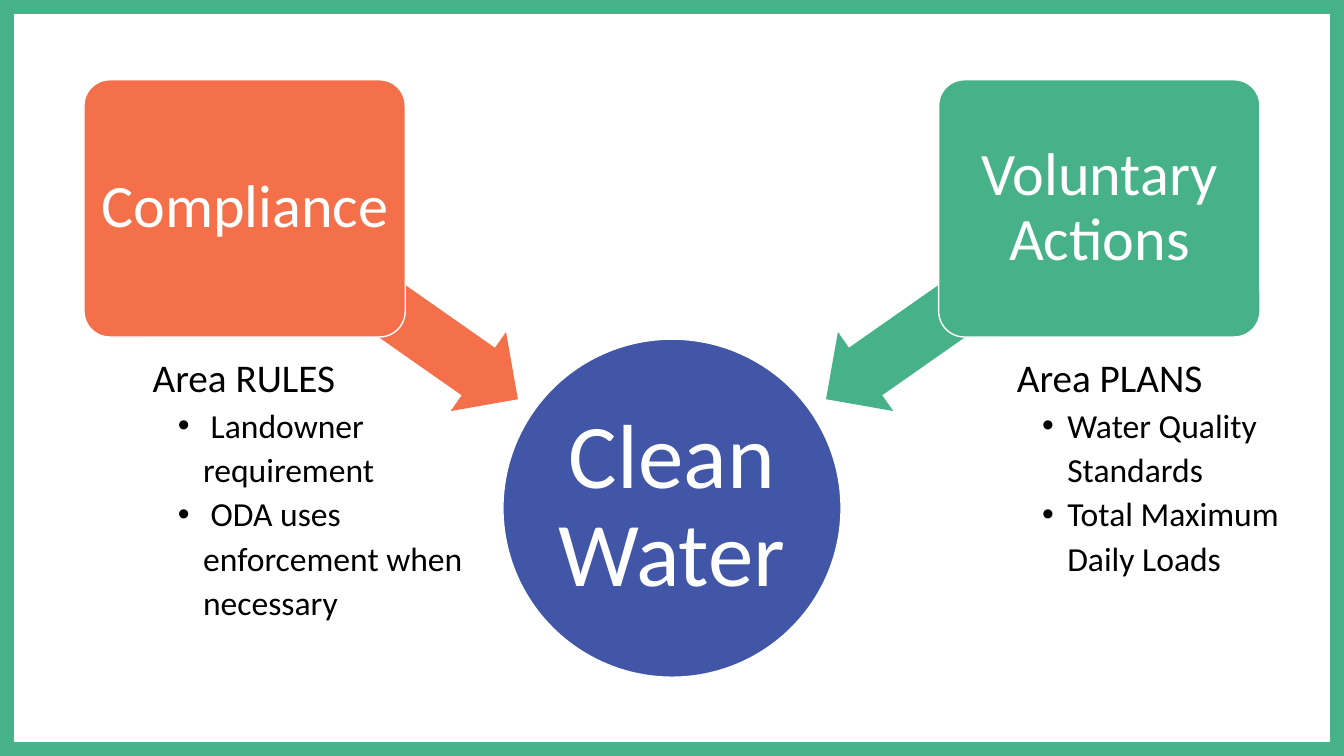
from lxml import etree
from pptx import Presentation
from pptx.dml.color import RGBColor
from pptx.enum.shapes import MSO_SHAPE
from pptx.enum.text import MSO_ANCHOR, MSO_AUTO_SIZE, PP_ALIGN
from pptx.oxml.ns import qn
from pptx.util import Pt

RECTANGLE = MSO_SHAPE.RECTANGLE
OVAL = MSO_SHAPE.OVAL
ROUNDED = MSO_SHAPE.ROUNDED_RECTANGLE
LEFT_ARROW = MSO_SHAPE.LEFT_ARROW
MIDDLE = MSO_ANCHOR.MIDDLE
CENTER = PP_ALIGN.CENTER
GROW = MSO_AUTO_SIZE.SHAPE_TO_FIT_TEXT

EMU_PER_PX = 9525
SLIDE_WIDTH, SLIDE_HEIGHT = 1280, 720
FONT = "Calibri"
COLORS = {
    "green": "47B289",
    "orange": "F3704B",
    "blue": "4156A6",
    "white": "FFFFFF",
    "black": "000000",
}

CARD_LEFT, CARD_TOP, CARD_WIDTH, CARD_HEIGHT = 80, 76, 306, 245
ARROW_LEFT, ARROW_TOP, ARROW_WIDTH, ARROW_HEIGHT = 204, 243, 318, 92
CIRCLE_TOP, CIRCLE_SIZE = 323, 322
NOTES_TOP = 332
BULLET_MARGIN, BULLET_HANG = 48, 24


def px(length):
    return length * EMU_PER_PX


def color(name):
    return RGBColor.from_string(COLORS[name])


def mirrored(left, width):
    return SLIDE_WIDTH - left - width


def add_block(slide, kind, box, fill=None, line=None, line_width=1):
    shape = slide.shapes.add_shape(kind, *map(px, box))
    shape.shadow.inherit = False
    if fill:
        shape.fill.solid()
        shape.fill.fore_color.rgb = color(fill)
    else:
        shape.fill.background()
    if line:
        shape.line.color.rgb = color(line)
        shape.line.width = Pt(line_width)
    else:
        shape.line.fill.background()
    return shape


def write(paragraph, text, size, ink="black", align=None, spacing=None):
    paragraph.text = text
    paragraph.alignment = align
    paragraph.line_spacing = spacing
    font = paragraph.runs[0].font
    font.name = FONT
    font.size = Pt(size)
    font.color.rgb = color(ink)


def add_label(shape, text, size, inset):
    frame = shape.text_frame
    frame.word_wrap = True
    frame.vertical_anchor = MIDDLE
    frame.margin_left = frame.margin_right = px(inset)
    frame.margin_top = frame.margin_bottom = px(inset)
    write(frame.paragraphs[0], text, size, ink="white", align=CENTER, spacing=0.9)


def add_arrow(slide, left, fill, rotation):
    box = (left, ARROW_TOP, ARROW_WIDTH, ARROW_HEIGHT)
    arrow = add_block(slide, LEFT_ARROW, box, fill)
    arrow.adjustments[0] = 0.6
    arrow.adjustments[1] = 0.5
    arrow.rotation = rotation


def add_card(slide, left, fill, text):
    box = (left, CARD_TOP, CARD_WIDTH, CARD_HEIGHT)
    card = add_block(slide, ROUNDED, box, fill, line="white")
    card.adjustments[0] = 0.1
    add_label(card, text, size=43, inset=8)


def add_bullet(paragraph):
    paragraph.level = 1
    properties = paragraph._p.get_or_add_pPr()
    properties.set("marL", str(px(BULLET_MARGIN)))
    properties.set("indent", str(-px(BULLET_HANG)))
    etree.SubElement(properties, qn("a:buFont")).set("typeface", "Arial")
    etree.SubElement(properties, qn("a:buChar")).set("char", "•")


def add_notes(slide, box, heading, items):
    frame = slide.shapes.add_textbox(*map(px, box)).text_frame
    frame.word_wrap = True
    frame.auto_size = GROW
    write(frame.paragraphs[0], heading, size=28)
    for item in items:
        paragraph = frame.add_paragraph()
        add_bullet(paragraph)
        write(paragraph, item, size=24, spacing=1.1)


def main():
    presentation = Presentation()
    presentation.slide_width = px(SLIDE_WIDTH)
    presentation.slide_height = px(SLIDE_HEIGHT)
    slide = presentation.slides.add_slide(presentation.slide_layouts[6])

    border = (0, 0, SLIDE_WIDTH, SLIDE_HEIGHT)
    add_block(slide, RECTANGLE, border, line="green", line_width=20)

    circle_left = (SLIDE_WIDTH - CIRCLE_SIZE) // 2
    circle_box = (circle_left, CIRCLE_TOP, CIRCLE_SIZE, CIRCLE_SIZE)
    circle = add_block(slide, OVAL, circle_box, "blue", line="white")
    add_label(circle, "Clean Water", size=65, inset=5)

    add_arrow(slide, ARROW_LEFT, "orange", rotation=215)
    add_card(slide, CARD_LEFT, "orange", "Compliance")
    add_arrow(slide, mirrored(ARROW_LEFT, ARROW_WIDTH), "green", rotation=325)
    add_card(slide, mirrored(CARD_LEFT, CARD_WIDTH), "green", "Voluntary Actions")

    add_notes(slide, (959, NOTES_TOP, 277, 265), "Area PLANS",
              ["Water Quality Standards", "Total Maximum Daily Loads"])
    add_notes(slide, (136, NOTES_TOP, 342, 313), "Area RULES",
              [" Landowner requirement", " ODA uses enforcement when necessary"])

    presentation.save("out.pptx")


if __name__ == "__main__":
    main()
